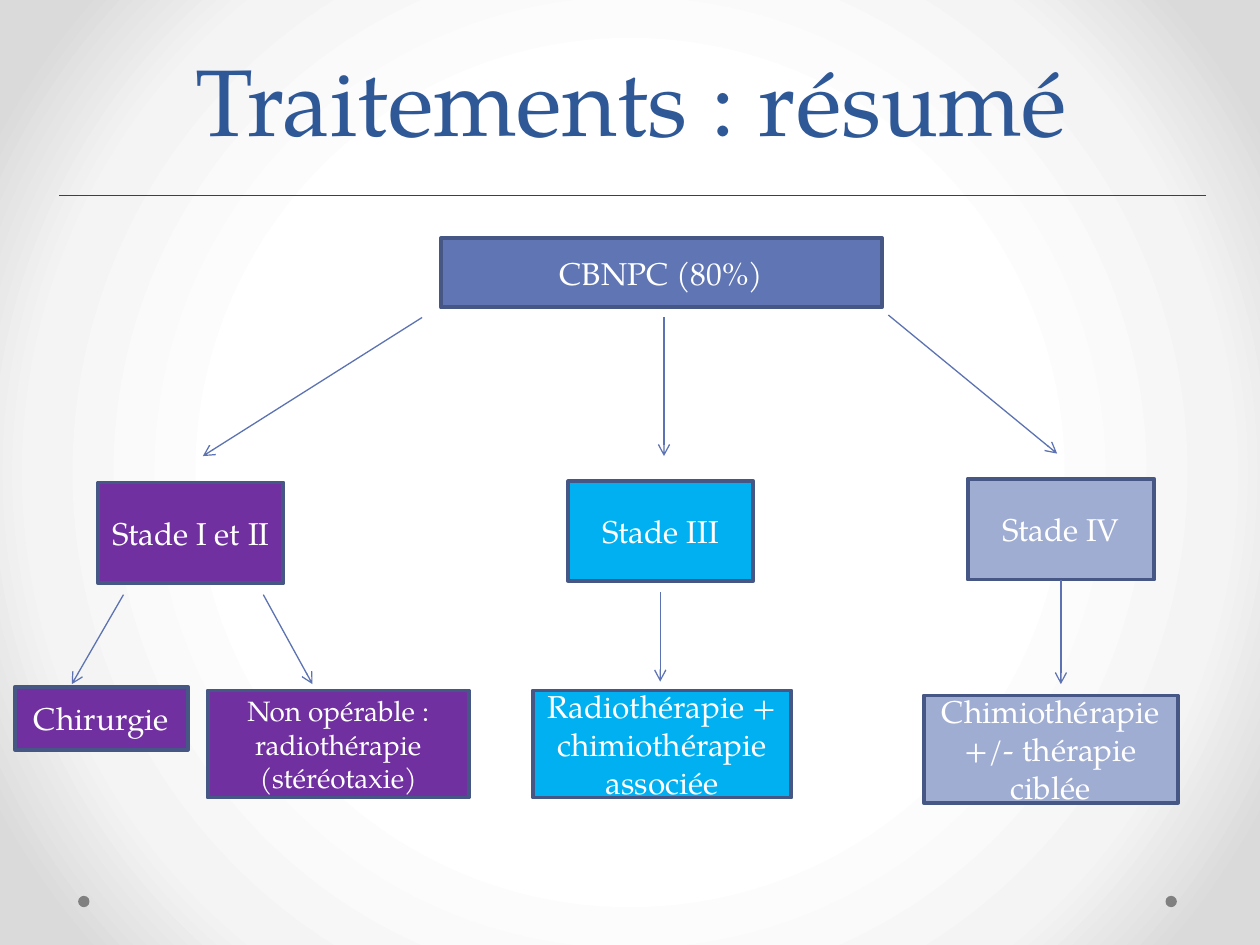
"""Build the slide summarising lung cancer treatments by stage."""
from lxml.etree import SubElement
from pptx import Presentation
from pptx.dml.color import RGBColor
from pptx.enum.shapes import MSO_CONNECTOR, MSO_SHAPE
from pptx.enum.text import MSO_ANCHOR, PP_ALIGN
from pptx.oxml.ns import qn
from pptx.util import Inches, Pt

FONT = "TeX Gyre Pagella"
TITLE_BLUE = RGBColor(0x2F, 0x58, 0x97)
RULE_BLUE = RGBColor(0x2C, 0x42, 0x6C)
ARROW_BLUE = RGBColor(0x5C, 0x72, 0xB2)
BORDER = RGBColor(0x47, 0x57, 0x85)
ROOT_BLUE = RGBColor(0x60, 0x76, 0xB4)
PURPLE = RGBColor(0x70, 0x30, 0xA0)
CYAN = RGBColor(0x00, 0xB0, 0xF0)
LAVENDER = RGBColor(0xA0, 0xAD, 0xD2)
GREY = RGBColor(0x80, 0x80, 0x80)
WHITE = RGBColor(0xFF, 0xFF, 0xFF)

TITLE = "Traitements : résumé"
BACKGROUND_STOPS = [(50, "FFFFFF"), (76, "F4F4F4"), (92, "DADADA")]
DOT_LEFTS = [0.62, 9.25]
STAGE_IV = "Stade IV"
BOXES = [
    ("CBNPC (80%)", (3.5, 1.89, 3.5, 0.55), ROOT_BLUE, 18),
    ("Stade I et II", (0.78, 3.83, 1.47, 0.8), PURPLE, 18),
    ("Stade III", (4.51, 3.82, 1.47, 0.79), CYAN, 18),
    (STAGE_IV, (7.68, 3.8, 1.48, 0.8), LAVENDER, 18),
    ("Chirurgie", (0.12, 5.45, 1.37, 0.5), PURPLE, 18),
    ("Non opérable : radiothérapie (stéréotaxie)",
     (1.65, 5.48, 2.07, 0.85), PURPLE, 16),
    ("Radiothérapie + chimiothérapie associée",
     (4.23, 5.48, 2.05, 0.85), CYAN, 18),
    ("Chimiothérapie +/- thérapie ciblée",
     (7.33, 5.52, 2.02, 0.85), LAVENDER, 18),
]
ARROWS = [
    (3.35, 2.52, 1.61, 3.62),
    (5.27, 2.52, 5.27, 3.62),
    (7.05, 2.5, 8.39, 3.6),
    (0.98, 4.72, 0.57, 5.43),
    (2.09, 4.72, 2.48, 5.43),
    (5.24, 4.7, 5.24, 5.41),
]
STAGE_IV_ARROW = (8.42, 4.6, 8.42, 5.43)


def paint_background(slide):
    slide.background.fill.gradient()
    gradient = slide.element.find(".//" + qn("a:gradFill"))
    for child in list(gradient):
        gradient.remove(child)
    stops = SubElement(gradient, qn("a:gsLst"))
    for percent, color in BACKGROUND_STOPS:
        stop = SubElement(stops, qn("a:gs"), pos=str(percent * 1000))
        SubElement(stop, qn("a:srgbClr"), val=color)
    circle = SubElement(gradient, qn("a:path"), path="circle")
    SubElement(circle, qn("a:fillToRect"), l="50000", t="50000", r="50000", b="50000")


def write(frame, text, size, color):
    frame.word_wrap = True
    paragraph = frame.paragraphs[0]
    paragraph.alignment = PP_ALIGN.CENTER
    run = paragraph.add_run()
    run.text = text
    run.font.name = FONT
    run.font.size = Pt(size)
    run.font.color.rgb = color
    return paragraph


def add_title(slide):
    title = slide.shapes.title
    title.left, title.top, title.width, title.height = map(Inches, (0.51, 0.13, 9, 1.15))
    title.text_frame.vertical_anchor = MSO_ANCHOR.BOTTOM
    write(title.text_frame, TITLE, 54, TITLE_BLUE).line_spacing = Pt(58)


def add_filled(slide, preset, bounds, color):
    shape = slide.shapes.add_shape(preset, *map(Inches, bounds))
    shape.shadow.inherit = False
    shape.fill.solid()
    shape.fill.fore_color.rgb = color
    return shape


def add_box(slide, text, bounds, color, size):
    box = add_filled(slide, MSO_SHAPE.RECTANGLE, bounds, color)
    box.line.color.rgb = BORDER
    box.line.width = Pt(2.25)
    box.text_frame.vertical_anchor = MSO_ANCHOR.MIDDLE
    write(box.text_frame, text, size, WHITE)
    return box


def add_line(slide, ends, color, width):
    line = slide.shapes.add_connector(MSO_CONNECTOR.STRAIGHT, *map(Inches, ends))
    line.line.color.rgb = color
    line.line.width = Pt(width)
    SubElement(line.element.spPr, qn("a:effectLst"))
    return line


def add_arrow(slide, ends):
    arrow = add_line(slide, ends, ARROW_BLUE, 0.75)
    SubElement(arrow.line._get_or_add_ln(), qn("a:tailEnd"), type="arrow")
    return arrow


def main():
    deck = Presentation()
    deck.slide_width, deck.slide_height = Inches(10), Inches(7.5)
    slide = deck.slides.add_slide(deck.slide_layouts[5])
    paint_background(slide)
    for left in DOT_LEFTS:
        dot = add_filled(slide, MSO_SHAPE.OVAL, (left, 7.11, 0.09, 0.09), GREY)
        dot.line.fill.background()
    add_line(slide, (0.47, 1.55, 9.57, 1.55), RULE_BLUE, 0.25)
    add_title(slide)
    boxes = {box[0]: add_box(slide, *box) for box in BOXES}
    for ends in ARROWS:
        add_arrow(slide, ends)
    add_arrow(slide, STAGE_IV_ARROW).begin_connect(boxes[STAGE_IV], 2)
    deck.save("out.pptx")


if __name__ == "__main__":
    main()
